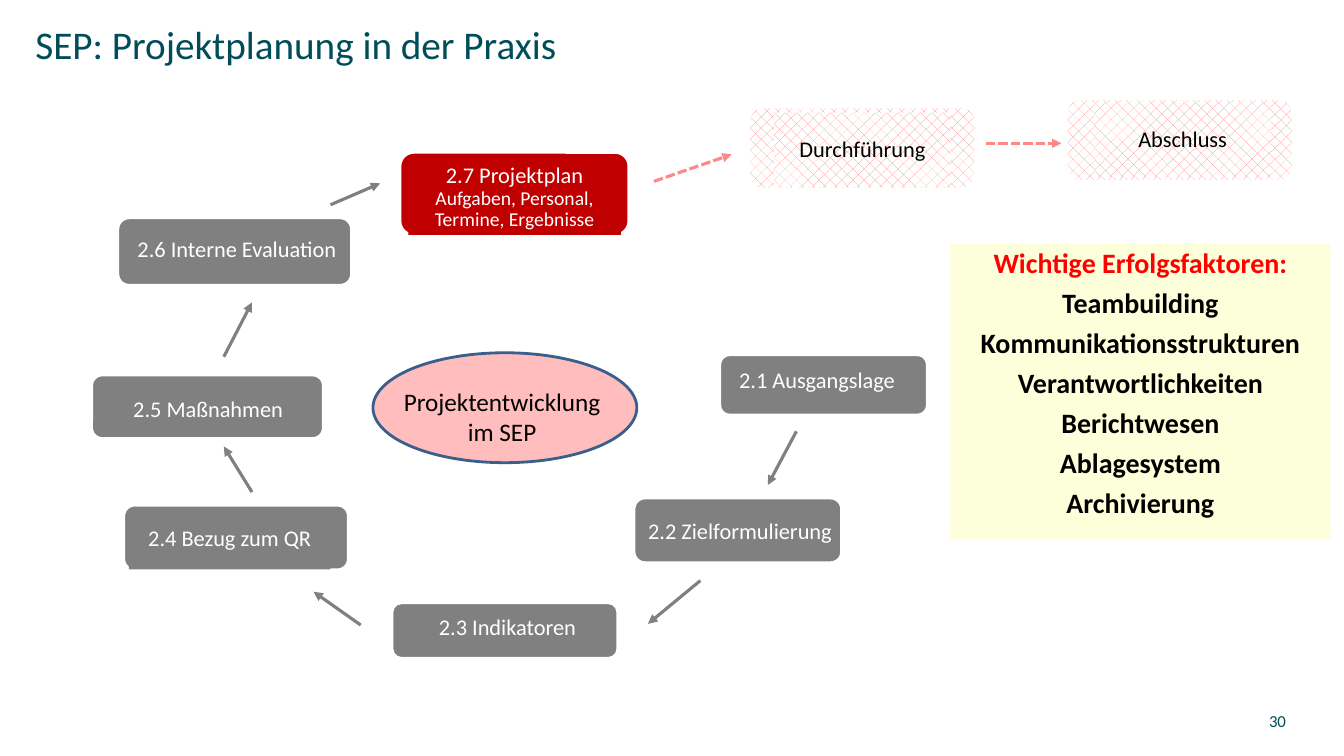
"""Build the slide on project planning in the SEP."""
from lxml.etree import SubElement
from pptx import Presentation
from pptx.dml.color import RGBColor
from pptx.enum.dml import MSO_LINE, MSO_PATTERN
from pptx.enum.shapes import MSO_CONNECTOR, MSO_SHAPE
from pptx.enum.text import MSO_ANCHOR, PP_ALIGN
from pptx.oxml.ns import qn
from pptx.util import Cm, Pt

COLOURS = {
    "white": "FFFFFF", "black": "000000", "petrol": "004D5A", "grey": "808080",
    "crimson": "C00000", "red": "FF0000", "salmon": "FF8989", "rose": "FFBDBD",
    "blue": "3A5F8C", "cream": "FDFEDA",
}
STEPS = [
    ((26.87, 2.49, 5.72, 2.08), (27.58, 2.59, 4.45, 1.88), ["Abschluss"], "hatch", True),
    ((18.87, 2.69, 5.72, 2.08), (19.51, 2.84, 4.45, 1.88), ["Durchführung"], "hatch", True),
    ((18.14, 8.94, 5.23, 1.52), (18.14, 8.86, 4.9, 1.52), ["2.1 Ausgangslage"], "grey", False),
    ((15.98, 12.55, 5.23, 1.63), (15.88, 12.6, 5.54, 1.63), ["2.2 Zielformulierung"], "grey", False),
    ((9.88, 15.19, 5.69, 1.4), (10.01, 15.27, 5.56, 1.12), ["2.3 Indikatoren"], "grey", False),
    ((3.12, 12.73, 5.66, 1.63), (3.25, 12.85, 5.08, 1.5), ["2.4 Bezug zum QR"], "grey", True),
    ((2.31, 9.45, 5.84, 1.6), (2.44, 9.68, 5.61, 1.3), ["2.5 Maßnahmen"], "grey", False),
    ((2.97, 5.49, 5.89, 1.7), (2.72, 5.38, 6.5, 1.83), ["2.6 Interne Evaluation"], "grey", False),
    ((10.08, 3.84, 5.77, 2.08), (10.29, 4.04, 5.36, 1.88),
     ["2.7 Projektplan", "Aufgaben, Personal, Termine, Ergebnisse"], "crimson", True),
]
CYCLE_ARROWS = [
    (20.07, 10.87, 19.35, 12.22), (17.65, 14.63, 16.33, 15.72),
    (9.09, 15.75, 7.9, 14.91), (6.35, 12.4, 5.64, 11.25),
    (5.64, 8.99, 6.35, 7.62), (8.33, 5.16, 9.58, 4.62),
]
OUTLOOK_ARROWS = [(16.48, 4.57, 18.44, 3.89), (24.84, 3.61, 26.75, 3.61)]
SUCCESS_FACTORS = [
    "Wichtige Erfolgsfaktoren:", "Teambuilding", "Kommunikationsstrukturen",
    "Verantwortlichkeiten", "Berichtwesen", "Ablagesystem", "Archivierung",
]


def colour(name):
    """Return the named colour."""
    return RGBColor.from_string(COLOURS[name])


def lengths(values):
    """Turn centimetres into slide lengths."""
    return [Cm(value) for value in values]


class SlideBuilder:
    """Hold the style and the page that is being built."""

    font = "Calibri"

    def __init__(self, page):
        """Remember the page."""
        self.page = page

    def set_text(self, shape, lines, sizes, tint, align=PP_ALIGN.CENTER,
                 anchor=MSO_ANCHOR.MIDDLE, inset=0.25, spacing=1.0, bold=False):
        """Fill a shape with one paragraph per line."""
        frame = shape.text_frame
        frame.word_wrap = True
        frame.vertical_anchor = anchor
        frame.margin_left = frame.margin_right = Cm(inset)
        frame.margin_top = frame.margin_bottom = Cm(min(inset, 0.13))
        frame.text = "\n".join(lines)
        for index, paragraph in enumerate(frame.paragraphs):
            paragraph.alignment = align
            paragraph.line_spacing = spacing
            paragraph.font.name = self.font
            paragraph.font.size = Pt(sizes[min(index, len(sizes) - 1)])
            paragraph.font.bold = bold
            paragraph.font.color.rgb = colour(tint)
        return frame.paragraphs

    def title(self, place, text):
        """Move and format the title placeholder."""
        shape = self.page.shapes.title
        shape.left, shape.top, shape.width, shape.height = lengths(place)
        self.set_text(shape, [text], [28], "petrol", PP_ALIGN.LEFT, MSO_ANCHOR.TOP, 0)

    def shape(self, kind, place, fill, edge=None):
        """Add a filled shape, hatched or plain."""
        shape = self.page.shapes.add_shape(kind, *lengths(place))
        shape.shadow.inherit = False
        if fill == "hatch":
            shape.fill.patterned()
            shape.fill.pattern = MSO_PATTERN.PERCENT_25
            shape.fill.fore_color.rgb = colour("salmon")
            shape.fill.back_color.rgb = colour("white")
        else:
            shape.fill.solid()
            shape.fill.fore_color.rgb = colour(fill)
        if edge:
            shape.line.color.rgb = colour(edge)
            shape.line.width = Pt(2)
        else:
            shape.line.fill.background()
        return shape

    def text(self, place, lines, sizes, tint, **style):
        """Add a text box."""
        box = self.page.shapes.add_textbox(*lengths(place))
        self.set_text(box, lines, sizes, tint, **style)

    def step(self, card_place, label_place, lines, fill, filled_label):
        """Add a step card with its label."""
        self.shape(MSO_SHAPE.ROUNDED_RECTANGLE, card_place, fill, "white")
        if filled_label:
            label = self.shape(MSO_SHAPE.RECTANGLE, label_place, fill)
        else:
            label = self.page.shapes.add_textbox(*lengths(label_place))
        tint = "black" if fill == "hatch" else "white"
        self.set_text(label, lines, [16, 14], tint, spacing=0.9)

    def arrow(self, ends, tint, dash=None):
        """Add a straight arrow."""
        arrow = self.page.shapes.add_connector(MSO_CONNECTOR.STRAIGHT, *lengths(ends))
        arrow.line.color.rgb = colour(tint)
        arrow.line.width = Pt(2.25)
        if dash:
            arrow.line.dash_style = dash
        SubElement(arrow.get_or_add_ln(), qn("a:tailEnd"), type="triangle")
        SubElement(arrow.element.spPr, qn("a:effectLst"))

    def factors(self, place, lines):
        """Add the panel of success factors with a red heading."""
        panel = self.shape(MSO_SHAPE.RECTANGLE, place, "cream")
        paragraphs = self.set_text(panel, lines, [20], "black", anchor=MSO_ANCHOR.TOP,
                                   spacing=0.9, bold=True)
        for paragraph in paragraphs:
            paragraph.space_after = Pt(7)
        paragraphs[0].font.color.rgb = colour("red")


def main():
    """Build and save the deck."""
    deck = Presentation()
    deck.slide_width, deck.slide_height = Cm(33.87), Cm(19.05)
    slide = SlideBuilder(deck.slides.add_slide(deck.slide_layouts[5]))
    slide.title((0.89, 0.51, 28.8, 2.79), "SEP: Projektplanung in der Praxis")
    for step in STEPS:
        slide.step(*step)
    for ends in CYCLE_ARROWS:
        slide.arrow(ends, "grey")
    for ends in OUTLOOK_ARROWS:
        slide.arrow(ends, "salmon", MSO_LINE.SQUARE_DOT)
    slide.shape(MSO_SHAPE.OVAL, (9.4, 8.89, 6.65, 2.77), "rose", "blue")
    slide.text((9.19, 9.6, 6.93, 1.8), ["Projektentwicklung", "im SEP"], [18], "black",
               anchor=MSO_ANCHOR.TOP)
    slide.factors((23.95, 6.15, 9.58, 7.44), SUCCESS_FACTORS)
    slide.text((30.53, 17.65, 3.33, 1.02), ["30"], [12], "petrol", inset=0)
    deck.save("out.pptx")


if __name__ == "__main__":
    main()
